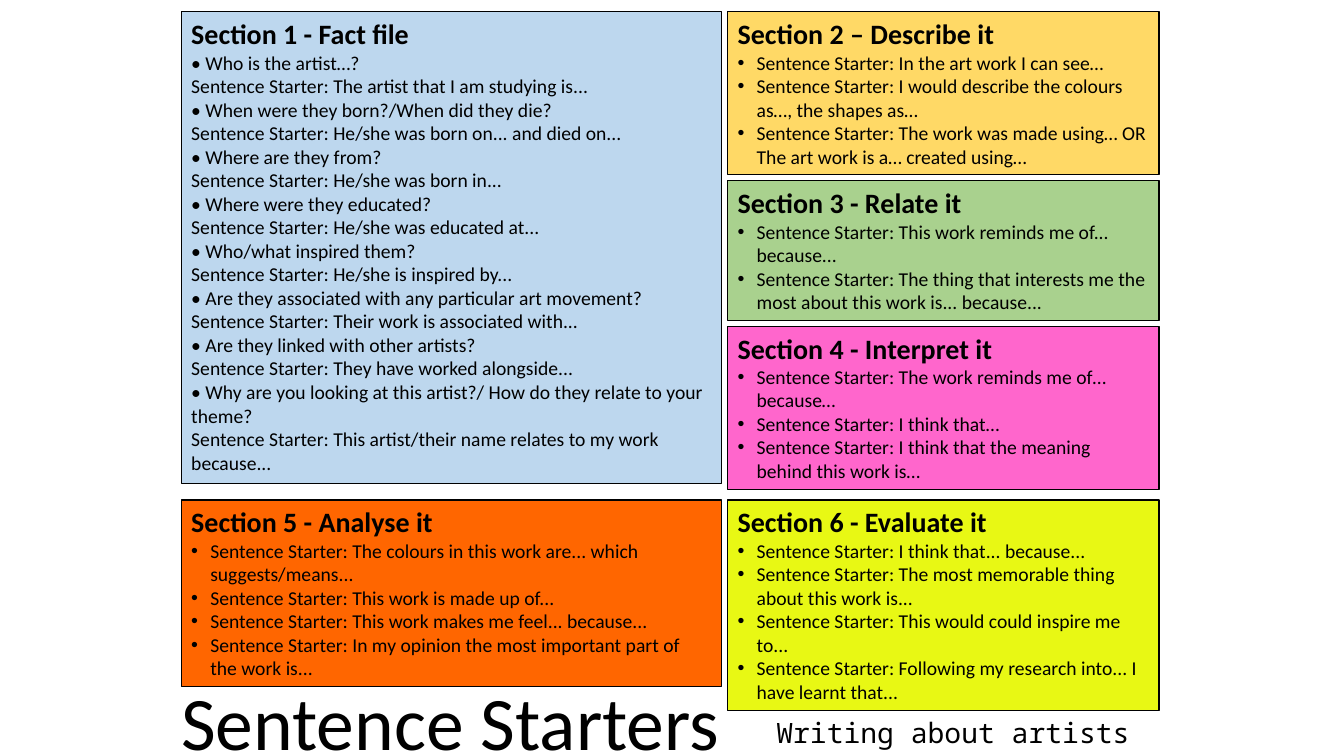
from dataclasses import dataclass

import pptx
import pptx.dml.color
import pptx.enum.shapes
import pptx.enum.text
import pptx.oxml
import pptx.oxml.ns
import pptx.util
from pptx.util import Cm


@dataclass(frozen=True)
class Theme:
    font: str = "Calibri"
    mono_font: str = "Noto Sans Mono"
    ink: str = "000000"
    fact: str = "BDD7EE"
    describe: str = "FFD966"
    relate: str = "A9D18E"
    interpret: str = "FF66CC"
    analyse: str = "FF6600"
    evaluate: str = "E8F814"
    title_size: int = 54
    heading_size: int = 20
    body_size: int = 14
    line_width: float = 0.75


THEME = Theme()
STARTER = "Sentence Starter: "
LEFT, LEFT_WIDTH = 4.57, 13.61
RIGHT, RIGHT_WIDTH = 18.34, 10.87
TOP, LOWER_TOP, GAP = 0.3, 12.6, 0.15

FACTS = [
    ("Who is the artist…?", "The artist that I am studying is..."),
    ("When were they born?/When did they die?", "He/she was born on... and died on..."),
    ("Where are they from?", "He/she was born in..."),
    ("Where were they educated?", "He/she was educated at..."),
    ("Who/what inspired them?", "He/she is inspired by..."),
    ("Are they associated with any particular art movement?",
     "Their work is associated with..."),
    ("Are they linked with other artists?", "They have worked alongside..."),
    ("Why are you looking at this artist?/ How do they relate to your theme?",
     "This artist/their name relates to my work because..."),
]

# heading, fill, height in cm, sentence starters
UPPER_RIGHT = [
    ("Section 2 – Describe it", THEME.describe, 4.11, [
        "In the art work I can see…",
        "I would describe the colours as…, the shapes as…",
        "The work was made using… OR The art work is a… created using…"]),
    ("Section 3 - Relate it", THEME.relate, 3.51, [
        "This work reminds me of... because...",
        "The thing that interests me the most about this work is... because..."]),
    ("Section 4 - Interpret it", THEME.interpret, 4.11, [
        "The work reminds me of… because…",
        "I think that…",
        "I think that the meaning behind this work is…"]),
]
ANALYSE = [
    "The colours in this work are... which suggests/means...",
    "This work is made up of...",
    "This work makes me feel... because...",
    "In my opinion the most important part of the work is...",
]
EVALUATE = [
    "I think that... because...",
    "The most memorable thing about this work is...",
    "This would could inspire me to...",
    "Following my research into... I have learnt that...",
]


def color(code):
    return pptx.dml.color.RGBColor.from_string(code)


def add_span(para, text, size, font=THEME.font, bold=False):
    span = para.add_run()
    span.text = text
    span.font.size = pptx.util.Pt(size)
    span.font.name = font
    span.font.bold = bold
    span.font.color.rgb = color(THEME.ink)


def add_bullet(para):
    properties = para._p.get_or_add_pPr()
    indent = Cm(0.48)
    properties.set("marL", str(indent))
    properties.set("indent", str(-indent))
    namespace = pptx.oxml.ns.nsdecls("a")
    for markup in ('<a:buFont {} typeface="Arial"/>', '<a:buChar {} char="•"/>'):
        properties.append(pptx.oxml.parse_xml(markup.format(namespace)))


def add_panel(page, box, heading, fill, lines, bulleted=True):
    panel = page.shapes.add_shape(
        pptx.enum.shapes.MSO_SHAPE.RECTANGLE, *(Cm(length) for length in box))
    panel.shadow.inherit = False
    panel.fill.solid()
    panel.fill.fore_color.rgb = color(fill)
    panel.line.color.rgb = color(THEME.ink)
    panel.line.width = pptx.util.Pt(THEME.line_width)
    frame = panel.text_frame
    frame.word_wrap = True
    frame.auto_size = pptx.enum.text.MSO_AUTO_SIZE.SHAPE_TO_FIT_TEXT
    frame.vertical_anchor = pptx.enum.text.MSO_ANCHOR.TOP
    para = frame.paragraphs[0]
    para.alignment = pptx.enum.text.PP_ALIGN.LEFT
    add_span(para, heading, THEME.heading_size, bold=True)
    for line in lines:
        para = frame.add_paragraph()
        para.alignment = pptx.enum.text.PP_ALIGN.LEFT
        if bulleted:
            add_bullet(para)
        add_span(para, line, THEME.body_size)


def add_starters(page, box, heading, fill, endings):
    add_panel(page, box, heading, fill, [STARTER + ending for ending in endings])


def add_fact_file(page, box):
    lines = []
    for question, ending in FACTS:
        lines += ["• " + question, STARTER + ending]
    add_panel(page, box, "Section 1 - Fact file", THEME.fact, lines, bulleted=False)


def add_upper_right(page, left, top, width):
    """Stack the panels downwards with equal gaps."""
    for heading, fill, height, endings in UPPER_RIGHT:
        add_starters(page, (left, top, width, height), heading, fill, endings)
        top += height + GAP


def add_caption(page, box, text, size, font, wrap):
    caption = page.shapes.add_textbox(*(Cm(length) for length in box))
    frame = caption.text_frame
    frame.word_wrap = wrap
    frame.auto_size = pptx.enum.text.MSO_AUTO_SIZE.SHAPE_TO_FIT_TEXT
    para = frame.paragraphs[0]
    para.alignment = pptx.enum.text.PP_ALIGN.CENTER
    add_span(para, text, size, font)


def main():
    deck = pptx.Presentation()
    deck.slide_width, deck.slide_height = Cm(33.87), Cm(19.05)
    page = deck.slides.add_slide(deck.slide_layouts[6])
    add_fact_file(page, (LEFT, TOP, LEFT_WIDTH, 11.89))
    add_upper_right(page, RIGHT, TOP, RIGHT_WIDTH)
    add_starters(page, (LEFT, LOWER_TOP, LEFT_WIDTH, 4.7),
                 "Section 5 - Analyse it", THEME.analyse, ANALYSE)
    add_starters(page, (RIGHT, LOWER_TOP, RIGHT_WIDTH, 5.31),
                 "Section 6 - Evaluate it", THEME.evaluate, EVALUATE)
    add_caption(page, (4.24, 16.89, 14.22, 2.57), "Sentence Starters",
                THEME.title_size, THEME.font, wrap=False)
    add_caption(page, (18.85, 17.91, 10.34, 1.12), "Writing about artists",
                THEME.heading_size, THEME.mono_font, wrap=True)
    deck.save("out.pptx")


if __name__ == "__main__":
    main()
